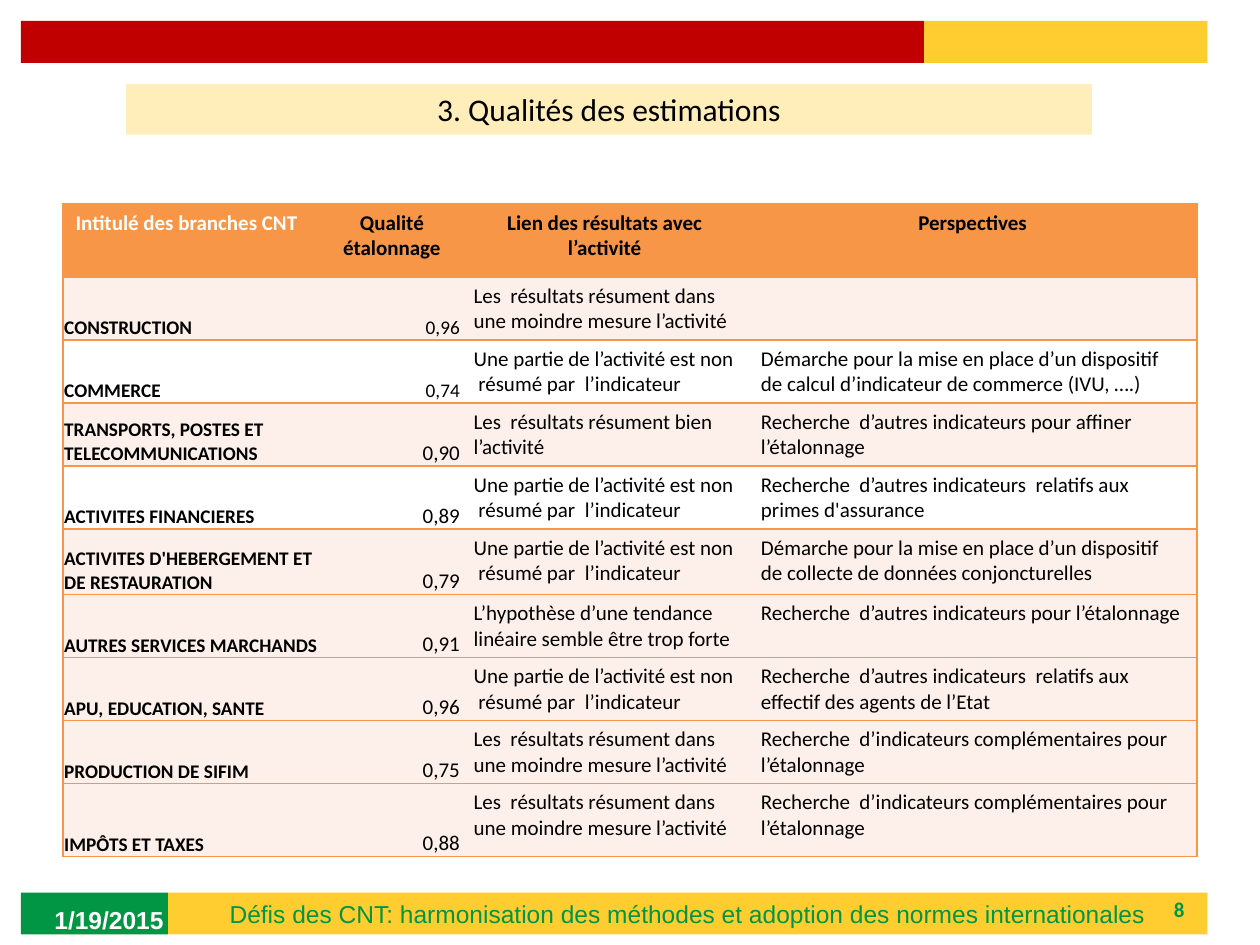
from lxml import etree
from pptx import Presentation
from pptx.dml.color import RGBColor
from pptx.enum.shapes import MSO_SHAPE
from pptx.enum.text import MSO_ANCHOR, PP_ALIGN
from pptx.oxml.ns import qn
from pptx.util import Pt

RECTANGLE = MSO_SHAPE.RECTANGLE
TOP, MIDDLE, BOTTOM = MSO_ANCHOR.TOP, MSO_ANCHOR.MIDDLE, MSO_ANCHOR.BOTTOM
LEFT, CENTER, RIGHT = PP_ALIGN.LEFT, PP_ALIGN.CENTER, PP_ALIGN.RIGHT

GREEN = RGBColor(0x00, 0x96, 0x44)
YELLOW = RGBColor(0xFF, 0xCD, 0x2F)
RED = RGBColor(0xC0, 0x00, 0x00)
CREAM = RGBColor(0xFF, 0xEE, 0xB9)
ORANGE = RGBColor(0xF7, 0x96, 0x46)
PEACH = RGBColor(0xFD, 0xEF, 0xE9)
WHITE = RGBColor(0xFF, 0xFF, 0xFF)
BLACK = RGBColor(0x00, 0x00, 0x00)

NO_GRID_STYLE = "{2D5ABB26-0587-4C30-8999-92F81FD0307C}"
COLUMN_WIDTHS = [148.5, 79, 164.2, 256.3]
ROW_HEIGHTS = [41.6, 35.5, 35.5, 35.5, 35.5, 37.4, 35.5, 35.5, 35.5, 41.6]

PARTLY = "Une partie de l’activité est non  résumé par  l’indicateur"
LESS = "Les  résultats résument dans une moindre mesure l’activité"
COMPLEMENT = "Recherche  d’indicateurs complémentaires pour l’étalonnage"
HEADINGS = ["Intitulé des branches CNT", "Qualité étalonnage",
            "Lien des résultats avec l’activité", "Perspectives"]
BRANCHES = [
    ("CONSTRUCTION", "0,96", LESS, ""),
    ("COMMERCE", "0,74", PARTLY,
     "Démarche pour la mise en place d’un dispositif de calcul d’indicateur de commerce (IVU, ….)"),
    ("TRANSPORTS, POSTES ET TELECOMMUNICATIONS", "0,90",
     "Les  résultats résument bien l’activité",
     "Recherche  d’autres indicateurs pour affiner l’étalonnage"),
    ("ACTIVITES FINANCIERES", "0,89", PARTLY,
     "Recherche  d’autres indicateurs  relatifs aux primes d'assurance"),
    ("ACTIVITES D'HEBERGEMENT ET DE RESTAURATION", "0,79", PARTLY,
     "Démarche pour la mise en place d’un dispositif de collecte de données conjoncturelles"),
    ("AUTRES SERVICES MARCHANDS", "0,91",
     "L’hypothèse d’une tendance linéaire semble être trop forte",
     "Recherche  d’autres indicateurs pour l’étalonnage"),
    ("APU, EDUCATION, SANTE", "0,96", PARTLY,
     "Recherche  d’autres indicateurs  relatifs aux effectif des agents de l’Etat"),
    ("PRODUCTION DE SIFIM", "0,75", LESS, COMPLEMENT),
    ("IMPÔTS ET TAXES", "0,88", LESS, COMPLEMENT),
]
WHITE_ROWS = (2, 4)


def write(frame, text, size, color, align=LEFT, bold=False, font="Calibri"):
    frame.word_wrap = True
    paragraph = frame.paragraphs[0]
    paragraph.alignment = align
    run = paragraph.add_run()
    run.text = text
    run.font.name = font
    run.font.size = Pt(size)
    run.font.bold = bold
    run.font.color.rgb = color


def add_band(left, top, width, height, color):
    band = slide.shapes.add_shape(RECTANGLE, Pt(left), Pt(top), Pt(width), Pt(height))
    band.shadow.inherit = False
    band.fill.solid()
    band.fill.fore_color.rgb = color
    band.line.fill.background()
    band.text_frame.vertical_anchor = MIDDLE
    return band.text_frame


presentation = Presentation()
presentation.slide_width = Pt(720)
presentation.slide_height = Pt(540)
slide = presentation.slides.add_slide(presentation.slide_layouts[6])

# Header and footer bands
add_band(12, 510, 84, 24, GREEN)
footer = add_band(96, 510, 594, 24, YELLOW)
write(footer, "Défis des CNT: harmonisation des méthodes et adoption des normes internationales",
      14, GREEN, CENTER, font="Arial")
add_band(12, 12, 516, 24, RED)
add_band(528, 12, 162, 24, YELLOW)

page_number = slide.shapes.add_textbox(Pt(516), Pt(510), Pt(168), Pt(19.5)).text_frame
page_number.vertical_anchor = MIDDLE
write(page_number, "8", 12, GREEN, RIGHT, bold=True)
date = slide.shapes.add_textbox(Pt(24), Pt(511), Pt(168), Pt(29)).text_frame
date.vertical_anchor = MIDDLE
write(date, "1/19/2015", 14, WHITE, bold=True, font="Arial")

title = add_band(72, 48, 552, 29, CREAM)
write(title, "3. Qualités des estimations", 18, BLACK, CENTER)

# Quality of the estimates by branch
table_frame = slide.shapes.add_table(len(ROW_HEIGHTS), len(COLUMN_WIDTHS),
                                     Pt(36), Pt(116.6), Pt(648), Pt(373))
table = table_frame.table
table.horz_banding = False
table.first_row = False
table._tbl.tblPr.find(qn("a:tableStyleId")).text = NO_GRID_STYLE
for column, width in zip(table.columns, COLUMN_WIDTHS):
    column.width = Pt(width)
for row, height in zip(table.rows, ROW_HEIGHTS):
    row.height = Pt(height)

for r, texts in enumerate([HEADINGS, *BRANCHES]):
    for c, text in enumerate(texts):
        cell = table.cell(r, c)
        is_heading = r == 0
        is_tight = not is_heading and c < 2
        if is_tight:
            cell.margin_left = cell.margin_right = cell.margin_top = Pt(0.7)
            cell.margin_bottom = Pt(0)
        else:
            cell.margin_left = cell.margin_right = Pt(7.2)
            cell.margin_top = cell.margin_bottom = Pt(3.6)
        cell.vertical_anchor = BOTTOM if is_tight else TOP

        edges = ["lnT", "lnB"]
        if c == 0:
            edges.insert(0, "lnL")
        elif c == len(texts) - 1:
            edges.insert(0, "lnR")
        for edge in edges:
            border = etree.SubElement(cell._tc.get_or_add_tcPr(), qn(f"a:{edge}"), w=str(Pt(1)))
            paint = etree.SubElement(border, qn("a:solidFill"))
            etree.SubElement(paint, qn("a:srgbClr"), val=str(ORANGE))

        cell.fill.solid()
        cell.fill.fore_color.rgb = ORANGE if is_heading else WHITE if r in WHITE_ROWS else PEACH
        if not text:
            continue
        if is_heading:
            align = CENTER if c else LEFT
        else:
            align = RIGHT if c == 1 else LEFT
        is_small = not is_heading and (c == 0 or (c == 1 and r <= 2))
        write(cell.text_frame, text, 11 if is_small else 12,
              WHITE if is_heading and c == 0 else BLACK, align, bold=is_heading or c == 0)

presentation.save("out.pptx")
